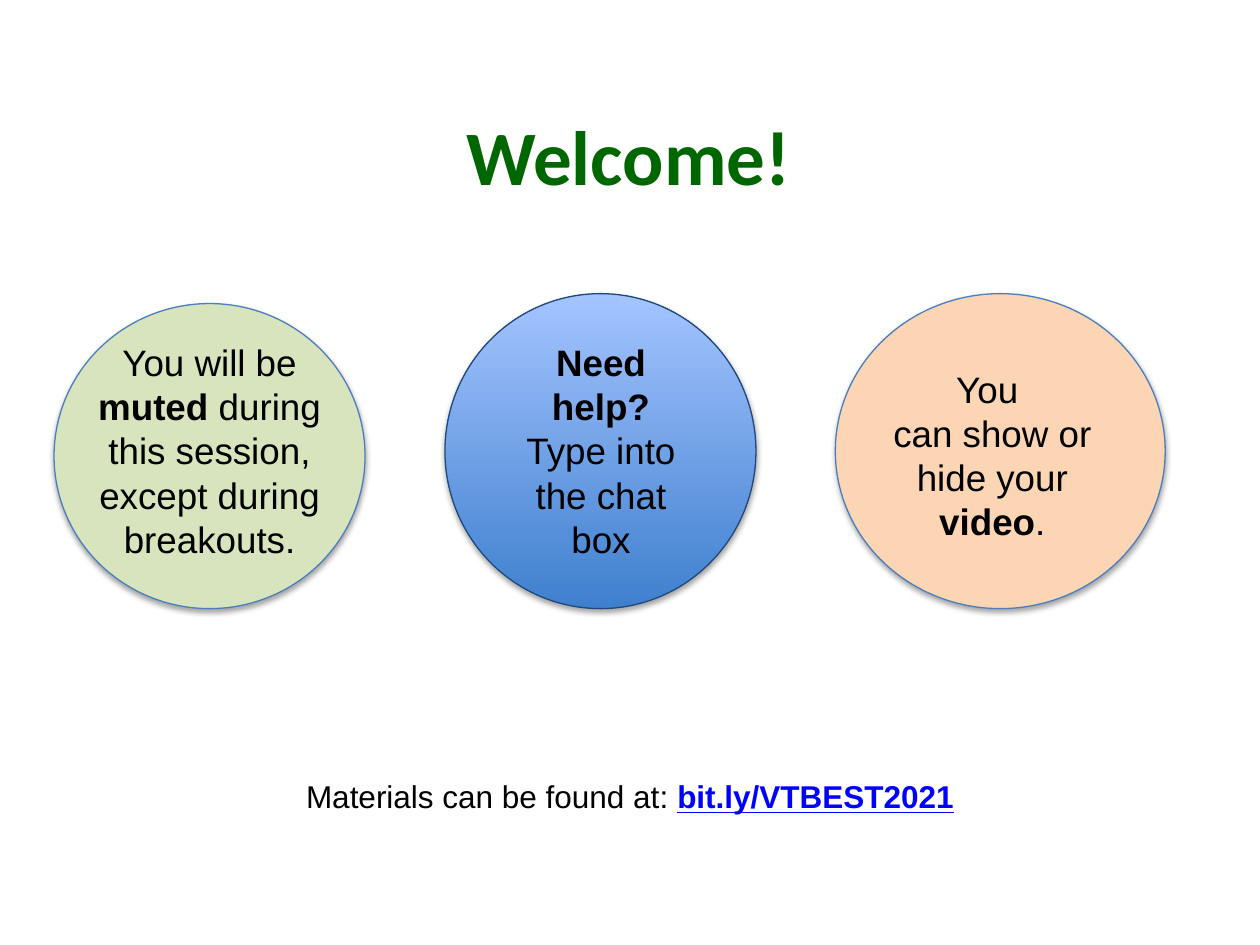
from lxml.etree import SubElement
from pptx import Presentation
from pptx.dml.color import RGBColor
from pptx.enum.shapes import MSO_SHAPE as Shape
from pptx.enum.text import MSO_ANCHOR as Anchor, PP_ALIGN as Align
from pptx.oxml.ns import qn
from pptx.util import Cm, Pt


def rgb(color):
    return RGBColor.from_string(color)


def write(text_frame, paragraphs, size=21, font="Arial", color="000000", anchor=Anchor.TOP):
    """Fill the frame with centred paragraphs of (text, format) runs."""
    text_frame.word_wrap = True
    text_frame.vertical_anchor = anchor
    for index, runs in enumerate(paragraphs):
        paragraph = text_frame.add_paragraph() if index else text_frame.paragraphs[0]
        paragraph.alignment = Align.CENTER
        for text, style in runs:
            run = paragraph.add_run()
            run.text = text
            run.font.name = font
            run.font.size = Pt(size)
            run.font.bold = style.get("bold", False)
            run.font.underline = style.get("underline", False)
            run.font.color.rgb = rgb(style.get("color", color))


BOLD = {"bold": True}
LINK = {"bold": True, "underline": True, "color": "0000FF"}

# Circle box, fill colours (bottom to top), outline, text box, paragraphs
circles = [
    ((8.97, 5.92, 6.27, 6.35), ["3F80CE", "A4C4FF"], "1F497D", (10.03, 6.73, 4.17, 4.75),
     [[("Need help?", BOLD)], [("Type into the chat box", {})]]),
    ((1.09, 6.12, 6.27, 6.15), ["D7E4BD"], "4B7EBC", (1.7, 6.73, 5.05, 4.75),
     [[("You will be ", {}), ("muted", BOLD),
       (" during this session, except during breakouts.", {})]]),
    ((16.84, 5.92, 6.65, 6.35), ["FCD5B5"], "4B7EBC", (17.48, 7.26, 5.05, 3.84),
     [[("You ", {})], [("can show or hide your ", {}), ("video", BOLD), (".", {})]]),
]

presentation = Presentation()
presentation.slide_width = Cm(25.4)
presentation.slide_height = Cm(19.05)
slide = presentation.slides.add_slide(presentation.slide_layouts[5])

title = slide.shapes.title
title.left, title.top, title.width, title.height = Cm(1.24), Cm(1.52), Cm(22.86), Cm(3.18)
write(title.text_frame, [[("Welcome!", BOLD)]], size=44, font="Calibri", color="006600",
      anchor=Anchor.MIDDLE)

for circle_box, fill_colors, outline, text_box, paragraphs in circles:
    circle = slide.shapes.add_shape(Shape.OVAL, *map(Cm, circle_box))
    if len(fill_colors) > 1:
        circle.fill.gradient()
        circle.fill.gradient_angle = 90
        for position, (stop, color) in enumerate(zip(circle.fill.gradient_stops, fill_colors)):
            stop.position = position
            stop.color.rgb = rgb(color)
    else:
        circle.fill.solid()
        circle.fill.fore_color.rgb = rgb(fill_colors[0])
    circle.line.color.rgb = rgb(outline)
    circle.line.width = Pt(0.75)

    # Soft shadow straight below the circle
    circle.shadow.inherit = False
    effects = circle.element.spPr.find(qn("a:effectLst"))
    shadow = SubElement(effects, qn("a:outerShdw"), blurRad=str(Pt(3.1)), dist=str(Pt(1.8)),
                        dir="5400000", rotWithShape="0")
    shadow_color = SubElement(shadow, qn("a:srgbClr"), val="000000")
    SubElement(shadow_color, qn("a:alpha"), val="35000")

    label = slide.shapes.add_textbox(*map(Cm, text_box))
    write(label.text_frame, paragraphs)

materials = slide.shapes.add_textbox(Cm(0), Cm(14.76), Cm(25.4), Cm(1.8))
write(materials.text_frame,
      [[("Materials can be found at: ", {}), ("bit.ly/VTBEST2021", LINK)]],
      size=18, anchor=Anchor.BOTTOM)

presentation.save("out.pptx")
